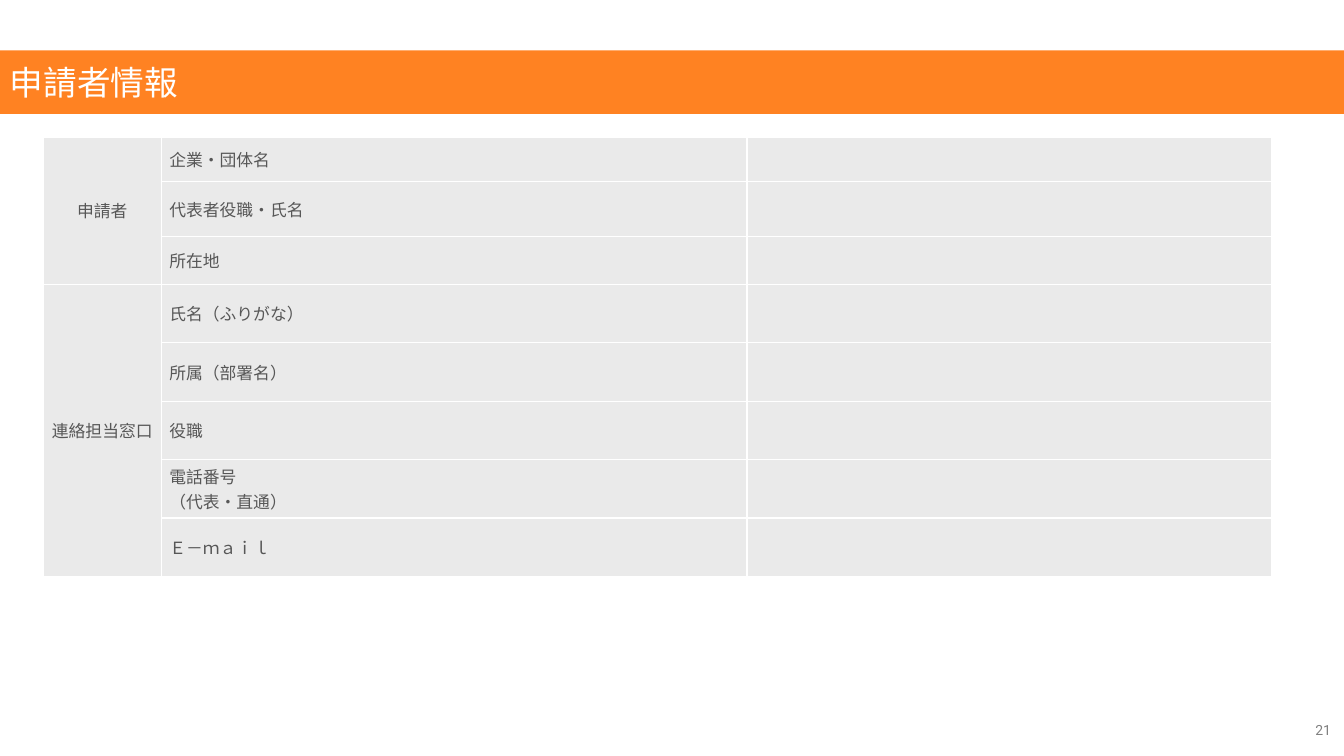
from dataclasses import dataclass

from lxml import etree
from pptx import Presentation
from pptx.dml.color import RGBColor
from pptx.enum.shapes import MSO_SHAPE
from pptx.enum.text import MSO_ANCHOR as ANCHOR, PP_ALIGN as ALIGN
from pptx.oxml.ns import qn
from pptx.util import Inches, Pt


@dataclass(frozen=True)
class Theme:
    orange: str = "FF8222"
    white: str = "FFFFFF"
    cell: str = "EAEAEA"
    text: str = "575757"
    number: str = "808080"
    title_size: int = 24
    body_size: int = 12
    number_size: int = 10
    border: int = 1
    font: str = "Noto Sans CJK JP"
    number_font: str = "Roboto"


THEME = Theme()

COLUMN_WIDTHS = [1.17, 5.81, 5.2]
ROW_HEIGHTS = [0.44, 0.55, 0.47] + [0.58] * 5
SECTIONS = [
    ("申請者", ["企業・団体名", "代表者役職・氏名", "所在地"]),
    ("連絡担当窓口", ["氏名（ふりがな）", "所属（部署名）", "役職",
                "電話番号\n（代表・直通）", "Ｅ－ｍａｉｌ"]),
]


def write(tf, text, size=THEME.body_size, color=THEME.text, font=THEME.font,
          align=ALIGN.LEFT):
    """Put each line of text in its own formatted paragraph."""
    for i, line in enumerate(text.split("\n")):
        p = tf.add_paragraph() if i else tf.paragraphs[0]
        p.alignment = align
        r = p.add_run()
        r.text = line
        r.font.size = Pt(size)
        r.font.name = font
        r.font.color.rgb = RGBColor.from_string(color)
        etree.SubElement(r.font._element, qn("a:ea"), typeface=font)


def add_title(s, text, width):
    sp = s.shapes.add_shape(MSO_SHAPE.RECTANGLE, 0, Inches(0.5), width, Inches(0.63))
    sp.shadow.inherit = False
    sp.fill.solid()
    sp.fill.fore_color.rgb = RGBColor.from_string(THEME.orange)
    sp.line.fill.background()
    sp.text_frame.word_wrap = True
    sp.text_frame.vertical_anchor = ANCHOR.MIDDLE
    write(sp.text_frame, text, size=THEME.title_size, color=THEME.white)


def style_cell(cell):
    """Set the borders, fill and margins of a cell."""
    tc_pr = cell._tc.get_or_add_tcPr()
    for side in ("lnL", "lnR", "lnT", "lnB"):
        ln = etree.SubElement(tc_pr, qn(f"a:{side}"), w=str(Pt(THEME.border)))
        fill = etree.SubElement(ln, qn("a:solidFill"))
        etree.SubElement(fill, qn("a:srgbClr"), val=THEME.white)
    cell.fill.solid()
    cell.fill.fore_color.rgb = RGBColor.from_string(THEME.cell)
    cell.margin_left = cell.margin_right = Inches(0.08)
    cell.margin_top = cell.margin_bottom = 0
    cell.vertical_anchor = ANCHOR.MIDDLE


def add_form(s, left, top):
    table = s.shapes.add_table(
        len(ROW_HEIGHTS), len(COLUMN_WIDTHS), Inches(left), Inches(top),
        Inches(sum(COLUMN_WIDTHS)), Inches(sum(ROW_HEIGHTS))).table
    table.first_row = table.horz_banding = False
    for column, width in zip(table.columns, COLUMN_WIDTHS):
        column.width = Inches(width)
    for row, height in zip(table.rows, ROW_HEIGHTS):
        row.height = Inches(height)
    for cell in table.iter_cells():
        style_cell(cell)

    # Each section heading spans the rows of its fields
    first = 0
    for heading, fields in SECTIONS:
        head = table.cell(first, 0)
        head.merge(table.cell(first + len(fields) - 1, 0))
        write(head.text_frame, heading, align=ALIGN.CENTER)
        for i, field in enumerate(fields, first):
            write(table.cell(i, 1).text_frame, field, align=ALIGN.JUSTIFY)
        first += len(fields)


def add_page_number(s, text):
    tf = s.shapes.add_textbox(Inches(12.78), Inches(7.15),
                              Inches(0.42), Inches(0.17)).text_frame
    tf.word_wrap = True
    tf.margin_left = tf.margin_right = tf.margin_top = tf.margin_bottom = 0
    tf.vertical_anchor = ANCHOR.BOTTOM
    write(tf, text, size=THEME.number_size, color=THEME.number,
          font=THEME.number_font, align=ALIGN.RIGHT)


def main():
    prs = Presentation()
    prs.slide_width, prs.slide_height = Inches(13.33), Inches(7.5)
    s = prs.slides.add_slide(prs.slide_layouts[6])
    add_page_number(s, "21")
    add_form(s, 0.43, 1.36)
    add_title(s, "申請者情報", prs.slide_width)
    prs.save("out.pptx")


if __name__ == "__main__":
    main()
